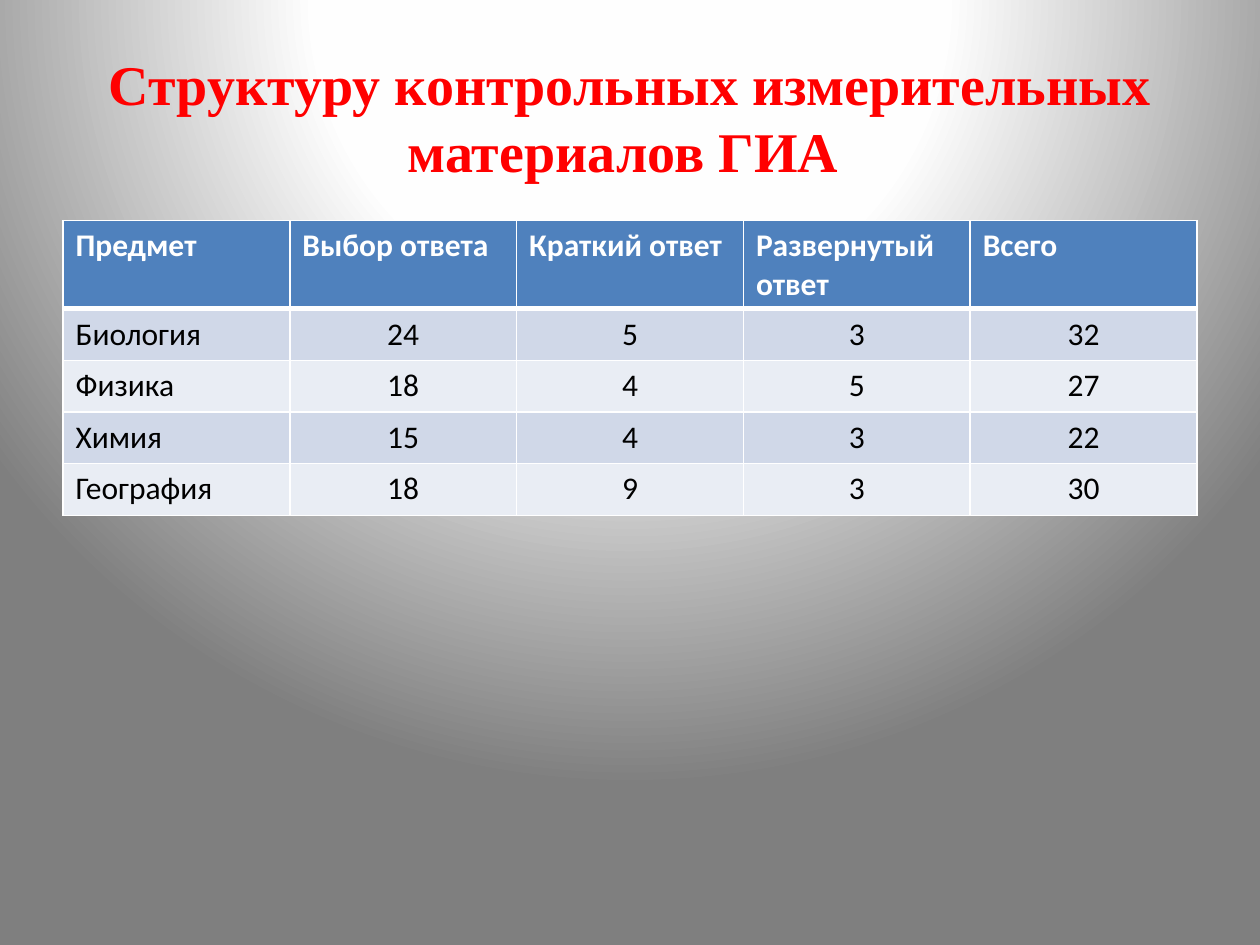
"""Build a slide with the structure of the GIA examination papers."""
from dataclasses import dataclass

import pptx
import pptx.dml.color
import pptx.enum.text
import pptx.oxml
import pptx.oxml.ns
import pptx.util

Inches = pptx.util.Inches
Pt = pptx.util.Pt
RGBColor = pptx.dml.color.RGBColor
Align = pptx.enum.text.PP_ALIGN
Anchor = pptx.enum.text.MSO_ANCHOR
qn = pptx.oxml.ns.qn

RED = RGBColor(0xFF, 0x00, 0x00)
WHITE = RGBColor(0xFF, 0xFF, 0xFF)
BLACK = RGBColor(0x00, 0x00, 0x00)
NEAR_WHITE = RGBColor(0xFE, 0xFE, 0xFE)
GREY = RGBColor(0x7F, 0x7F, 0x7F)
BLUE = RGBColor(0x4F, 0x81, 0xBD)
BANDS = (RGBColor(0xD0, 0xD8, 0xE8), RGBColor(0xE9, 0xED, 0xF4))

GLOW_STOPS = ((0, WHITE), (40, NEAR_WHITE), (100, GREY))
HEADINGS = ("Предмет", "Выбор ответа", "Краткий ответ", "Развернутый ответ", "Всего")


@dataclass(frozen=True)
class Exam:
    subject: str
    choice: int
    short: int
    extended: int

    def cells(self) -> tuple[str, ...]:
        counts = (self.choice, self.short, self.extended)
        return (self.subject, *map(str, counts), str(sum(counts)))


EXAMS = (
    Exam("Биология", 24, 5, 3),
    Exam("Физика", 18, 4, 5),
    Exam("Химия", 15, 4, 3),
    Exam("География", 18, 9, 3),
)


def write(frame, text: str, *, size: float = 18, font: str = "Calibri",
          color: RGBColor = BLACK, bold: bool = False, align=Align.LEFT) -> None:
    paragraph = frame.paragraphs[0]
    paragraph.alignment = align
    run = paragraph.add_run()
    run.text = text
    run.font.size = Pt(size)
    run.font.name = font
    run.font.bold = bold
    run.font.color.rgb = color


def paint_background(slide) -> None:
    slide.background.fill.gradient()
    gradient = slide.element.find(".//" + qn("a:gradFill"))
    stops = "".join(
        f'<a:gs pos="{percent * 1000}"><a:srgbClr val="{color}"/></a:gs>'
        for percent, color in GLOW_STOPS
    )
    glow = pptx.oxml.parse_xml(
        f'<a:gradFill {pptx.oxml.ns.nsdecls("a")} rotWithShape="1">'
        f'<a:gsLst>{stops}</a:gsLst><a:path path="circle">'
        '<a:fillToRect l="50000" t="-80000" r="50000" b="180000"/>'
        '</a:path></a:gradFill>'
    )
    gradient.getparent().replace(gradient, glow)


def draw_borders(cell, *, top: float = 1, bottom: float = 1) -> None:
    properties = cell._tc.get_or_add_tcPr()
    for side, width in (("L", 1), ("R", 1), ("T", top), ("B", bottom)):
        properties.append(pptx.oxml.parse_xml(
            f'<a:ln{side} {pptx.oxml.ns.nsdecls("a")} w="{Pt(width)}">'
            f'<a:solidFill><a:srgbClr val="{WHITE}"/></a:solidFill></a:ln{side}>'
        ))


def fill_cell(cell, text: str, row: int, column: int) -> None:
    header = row == 0
    draw_borders(cell, top=3 if row == 1 else 1, bottom=3 if header else 1)
    cell.fill.solid()
    cell.fill.fore_color.rgb = BLUE if header else BANDS[(row - 1) % 2]
    centred = not header and column > 0
    write(cell.text_frame, text, bold=header, color=WHITE if header else BLACK,
          align=Align.CENTER if centred else Align.LEFT)


def add_title(slide, text: str) -> None:
    title = slide.shapes.add_textbox(Inches(0.5), Inches(0.3), Inches(9), Inches(1.25))
    title.text_frame.word_wrap = True
    title.text_frame.vertical_anchor = Anchor.MIDDLE
    write(title.text_frame, text, size=32, font="Times New Roman", color=RED,
          bold=True, align=Align.CENTER)


def add_exam_table(slide) -> None:
    rows = (HEADINGS, *(exam.cells() for exam in EXAMS))
    row_height = Inches(0.41)
    structure = slide.shapes.add_table(
        len(rows), len(HEADINGS), Inches(0.5), Inches(1.75),
        Inches(9), row_height * len(rows),
    ).table
    for row, texts in enumerate(rows):
        structure.rows[row].height = row_height
        for column, text in enumerate(texts):
            fill_cell(structure.cell(row, column), text, row, column)


def main() -> None:
    deck = pptx.Presentation()
    deck.slide_width = Inches(10)
    deck.slide_height = Inches(7.5)
    slide = deck.slides.add_slide(deck.slide_layouts[6])
    paint_background(slide)
    add_title(slide, "Структуру контрольных измерительных материалов ГИА ")
    add_exam_table(slide)
    deck.save("out.pptx")


if __name__ == "__main__":
    main()
